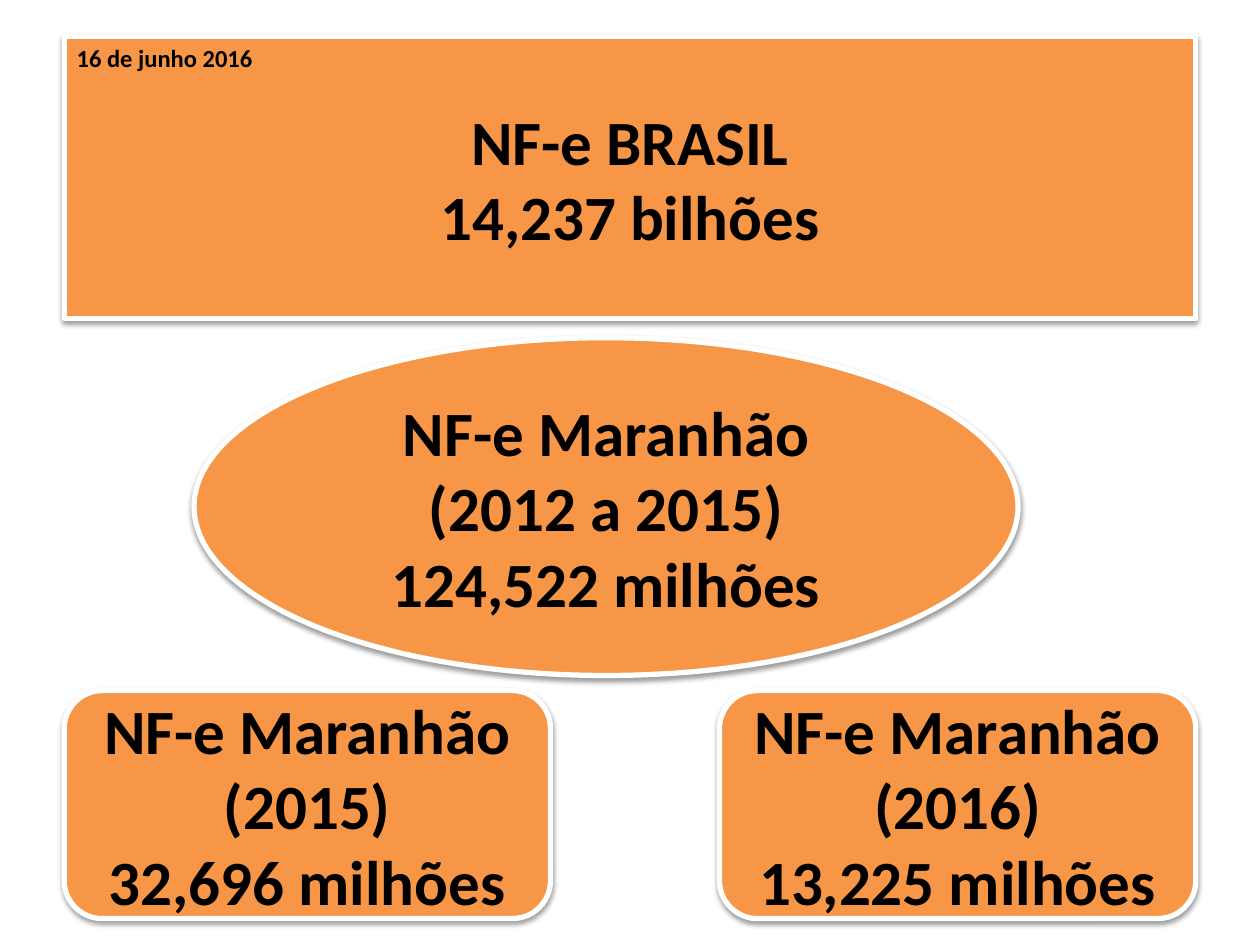
from lxml import etree
from pptx import Presentation
from pptx.dml.color import RGBColor
from pptx.enum import shapes, text
from pptx.oxml import ns
from pptx.util import Pt

ORANGE = RGBColor(0xF7, 0x96, 0x46)
WHITE = RGBColor(0xFF, 0xFF, 0xFF)
BLACK = RGBColor(0, 0, 0)

LEFT, RIGHT = 36.7, 683.3
BANNER_TOP = 20.9
YEARS_TOP, YEARS_HEIGHT = 394.6, 130.3


def write_lines(frame, lines, size, align):
    frame.word_wrap = True
    for i, line in enumerate(lines):
        paragraph = frame.paragraphs[0] if i == 0 else frame.add_paragraph()
        paragraph.text = line
        paragraph.alignment = align
        font = paragraph.font
        font.name, font.size, font.bold = "Calibri", Pt(size), True
        font.color.rgb = BLACK


def add_soft_shadow(shape):
    shape.shadow.inherit = False
    effects = shape.element.spPr.find(ns.qn("a:effectLst"))
    shadow = etree.SubElement(effects, ns.qn("a:outerShdw"), blurRad=str(Pt(3.1)),
                              dist=str(Pt(1.6)), dir="5400000", rotWithShape="0")
    color = etree.SubElement(shadow, ns.qn("a:srgbClr"), val=str(BLACK))
    etree.SubElement(color, ns.qn("a:alpha"), val="38000")


def add_total(slide, kind, box, lines):
    """Orange shape holding an invoice total, centred in the given box."""
    total = slide.shapes.add_shape(kind, *map(Pt, box))
    total.fill.solid()
    total.fill.fore_color.rgb = ORANGE
    total.line.color.rgb = WHITE
    total.line.width = Pt(3)
    add_soft_shadow(total)
    total.text_frame.vertical_anchor = text.MSO_ANCHOR.MIDDLE
    write_lines(total.text_frame, lines, 36, text.PP_ALIGN.CENTER)


def add_banner(slide, box):
    """National total, with the date in the top left corner."""
    add_total(slide, shapes.MSO_SHAPE.RECTANGLE, box, ["NF-e BRASIL", "14,237 bilhões"])
    left, top, _, _ = box
    date = slide.shapes.add_textbox(Pt(left), Pt(top), Pt(170), Pt(24.5))
    write_lines(date.text_frame, ["16 de junho 2016"], 14, text.PP_ALIGN.LEFT)


def add_years(slide, box):
    """State totals of two years, at the two ends of the box."""
    left, top, width, height = box
    for year, amount, card_width, side in (("2015", "32,696", 277.9, 0),
                                           ("2016", "13,225", 272.2, 1)):
        card_left = left + side * (width - card_width)
        add_total(slide, shapes.MSO_SHAPE.ROUNDED_RECTANGLE,
                  (card_left, top, card_width, height),
                  [f"NF-e Maranhão ({year})", f"{amount} milhões"])


def main():
    prs = Presentation()
    prs.slide_width, prs.slide_height = Pt(720), Pt(540)
    slide = prs.slides.add_slide(prs.slide_layouts[6])
    add_banner(slide, (LEFT, BANNER_TOP, RIGHT - LEFT, 161.3))
    add_total(slide, shapes.MSO_SHAPE.OVAL, (110.9, 193, 470.9, 193),
              ["NF-e Maranhão (2012 a 2015)", "124,522 milhões"])
    add_years(slide, (LEFT, YEARS_TOP, RIGHT - LEFT, YEARS_HEIGHT))
    prs.save("out.pptx")


if __name__ == "__main__":
    main()
